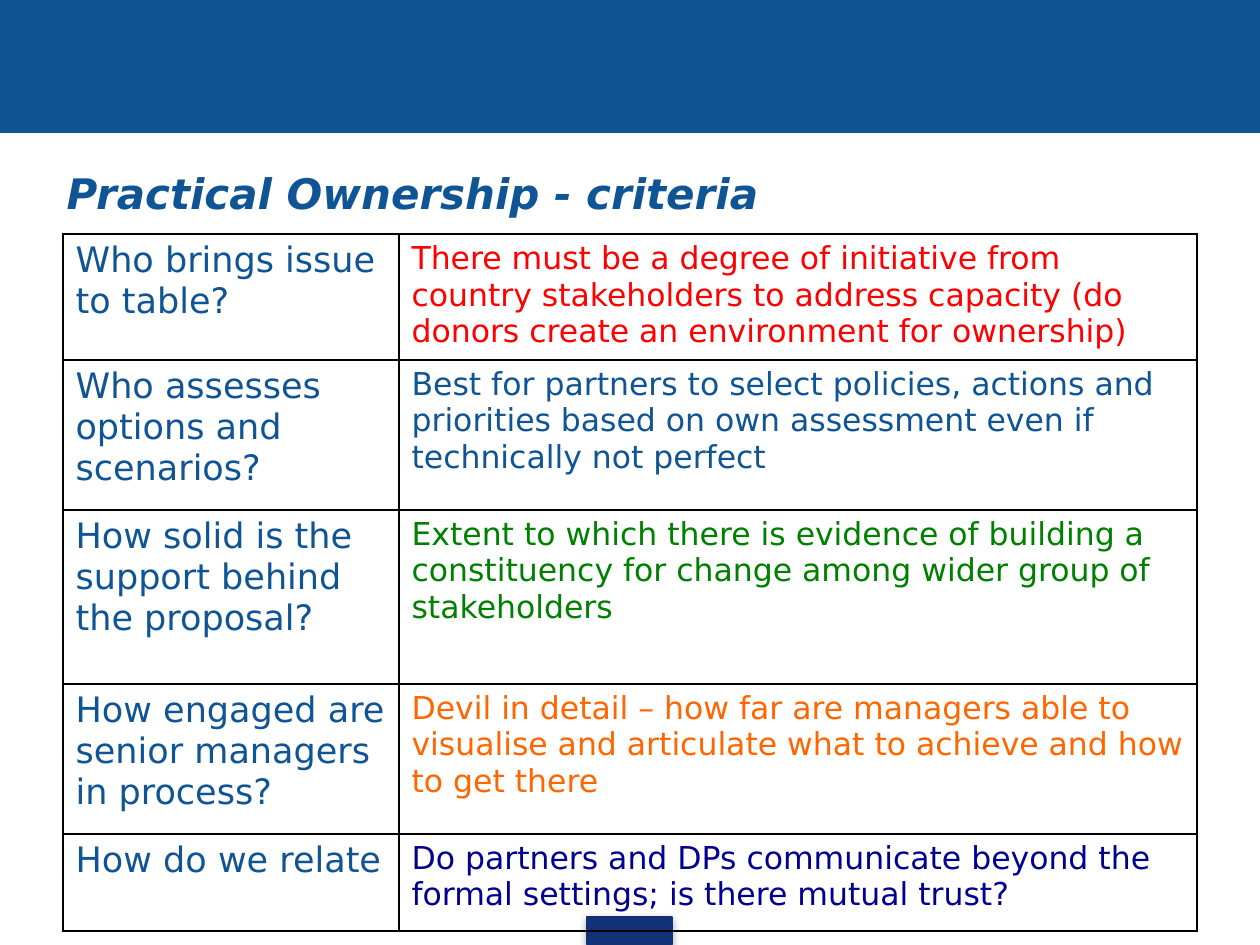
from lxml import etree
from pptx import Presentation
from pptx import util as u
from pptx.dml.color import RGBColor
from pptx.enum import shapes, text
from pptx.oxml import parse_xml
from pptx.oxml.ns import nsdecls, qn

PX = 914400 // 126
FONT = "DejaVu Sans"
BLUE, NAVY, BLACK = "0F5494", "133176", "000000"
COLUMNS = [336, 798]
ROWS = [
    (126, "Who brings issue to table?", "FF0000",
     "There must be a degree of initiative from country stakeholders to address "
     "capacity (do donors create an environment for ownership)"),
    (150, "Who assesses options and scenarios?", BLUE,
     "Best for partners to select policies, actions and priorities based on own "
     "assessment even if technically not perfect"),
    (174, "How solid is the support behind the proposal?", "008000",
     "Extent to which there is evidence of building a constituency for change "
     "among wider group of stakeholders"),
    (150, "How engaged are senior managers in process?", "FF6600",
     "Devil in detail – how far are managers able to visualise and articulate "
     "what to achieve and how to get there"),
    (97, "How do we relate", "000090",
     "Do partners and DPs communicate beyond the formal settings; is there mutual trust?"),
]


def px(*values):
    """Convert pixel lengths to EMU."""
    return [u.Emu(v * PX) for v in values]


def rgb(color):
    """Turn a hex string into a colour."""
    return RGBColor.from_string(color)


def write(tf, content, size=18, color=BLUE, bold=False, italic=False):
    """Put one formatted, left-aligned paragraph in a text frame."""
    tf.word_wrap = True
    p = tf.paragraphs[0]
    p.alignment = text.PP_ALIGN.LEFT
    r = p.add_run()
    r.text = content
    r.font.name, r.font.size = FONT, u.Pt(size)
    r.font.bold, r.font.italic = bold, italic
    r.font.color.rgb = rgb(color)


def add_bar(s, box, color):
    """Draw a plain rectangle without shadow."""
    sp = s.shapes.add_shape(shapes.MSO_SHAPE.RECTANGLE, *px(*box))
    sp.shadow.inherit = False
    sp.fill.solid()
    sp.fill.fore_color.rgb = rgb(color)
    sp.line.color.rgb = rgb(color)
    sp.line.width = u.Pt(0.75)
    return sp


def add_shadow(sp):
    """Give a shape a soft shadow that falls straight down."""
    effects = sp._element.spPr.find(qn("a:effectLst"))
    effects.append(parse_xml(
        f'<a:outerShdw {nsdecls("a")} blurRad="{u.Pt(5)}" dist="{u.Pt(1.8)}" '
        f'dir="5400000" rotWithShape="0"><a:srgbClr val="{BLACK}">'
        '<a:alpha val="35000"/></a:srgbClr></a:outerShdw>'))


def add_title(s, content):
    """Place and format the title placeholder."""
    sp = s.shapes.title
    sp.left, sp.top, sp.width, sp.height = px(54, 154, 1134, 78)
    sp.text_frame.vertical_anchor = text.MSO_ANCHOR.MIDDLE
    write(sp.text_frame, content, size=24, bold=True, italic=True)


def set_borders(cell, color=BLACK, width=1):
    """Outline all four sides of a table cell."""
    tc_pr = cell._tc.get_or_add_tcPr()
    for i, side in enumerate("LRTB"):
        ln = etree.Element(qn(f"a:ln{side}"), w=str(u.Pt(width)))
        fill = etree.SubElement(ln, qn("a:solidFill"))
        etree.SubElement(fill, qn("a:srgbClr"), val=color)
        tc_pr.insert(i, ln)


def add_criteria(s):
    """Build the table of questions and criteria."""
    height = sum(row[0] for row in ROWS)
    table = s.shapes.add_table(
        len(ROWS), len(COLUMNS), *px(63, 234, sum(COLUMNS), height)).table
    table.first_row = table.horz_banding = False
    for column, width in zip(table.columns, px(*COLUMNS)):
        column.width = width
    for row, (height, question, color, criterion) in zip(table.rows, ROWS):
        row.height = px(height)[0]
        write(row.cells[0].text_frame, question, size=20)
        write(row.cells[1].text_frame, criterion, color=color)
        for cell in row.cells:
            cell.fill.background()
            set_borders(cell)


def main():
    """Build and save the slide."""
    prs = Presentation()
    prs.slide_width, prs.slide_height = px(1260, 945)
    s = prs.slides.add_slide(prs.slide_layouts[5])
    add_bar(s, (0, 0, 1260, 132), BLUE)
    add_shadow(add_bar(s, (587, 917, 85, 28), NAVY))
    add_title(s, "Practical Ownership - criteria")
    add_criteria(s)
    prs.save("out.pptx")


if __name__ == "__main__":
    main()
